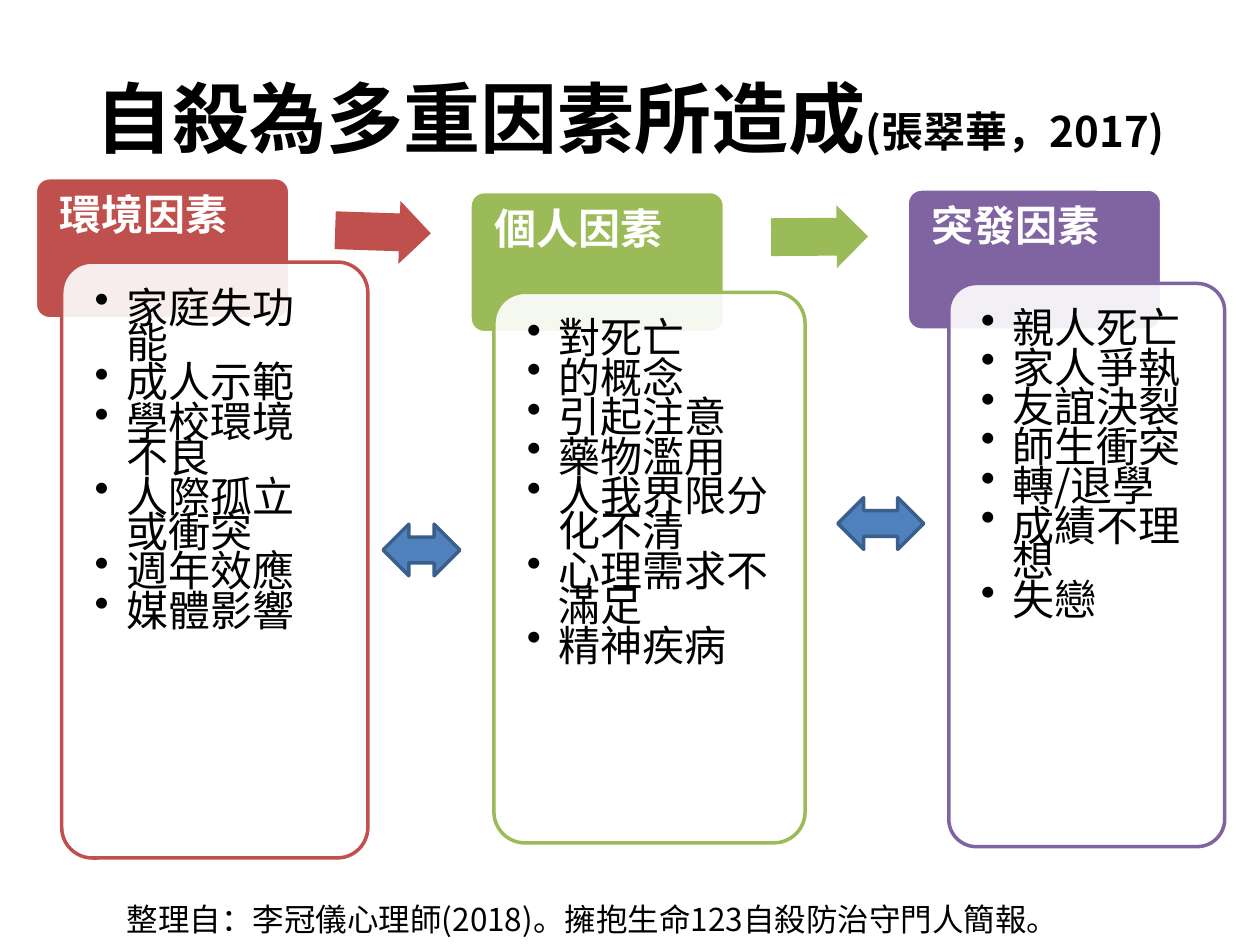
from lxml import etree
from pptx import Presentation
from pptx.dml.color import RGBColor
from pptx.enum.shapes import MSO_SHAPE
from pptx.enum.text import MSO_ANCHOR, PP_ALIGN
from pptx.oxml.ns import qn
from pptx.util import Inches, Pt

ROUNDED = MSO_SHAPE.ROUNDED_RECTANGLE
RIGHT_ARROW = MSO_SHAPE.RIGHT_ARROW
DOUBLE_ARROW = MSO_SHAPE.LEFT_RIGHT_ARROW
TOP, MIDDLE = MSO_ANCHOR.TOP, MSO_ANCHOR.MIDDLE
LEFT, CENTER = PP_ALIGN.LEFT, PP_ALIGN.CENTER

BLACK = RGBColor(0x00, 0x00, 0x00)
WHITE = RGBColor(0xFF, 0xFF, 0xFF)
RED = RGBColor(0xC0, 0x50, 0x4D)
GREEN = RGBColor(0x9B, 0xBB, 0x59)
PURPLE = RGBColor(0x80, 0x64, 0xA2)
BLUE = RGBColor(0x4F, 0x81, 0xBD)
DARK_BLUE = RGBColor(0x3A, 0x5F, 0x8C)

FONT = "Noto Sans CJK SC"
COLUMNS, ROWS = 100, 75  # the slide as a grid of square cells

# Heading, colour, heading place, panel place (column, row, width, height), items
FACTORS = [
    ("環境因素", RED, (2.8, 14.1, 20.2, 11.2), (4.9, 20.8, 24.3, 47.3),
     ["家庭失功能", "成人示範", "學校環境不良", "人際孤立或衝突",
      "週年效應", "媒體影響"]),
    ("個人因素", GREEN, (37.3, 15.2, 20.2, 11.2), (39.2, 23.2, 24.7, 43.7),
     ["對死亡", "的概念", "引起注意", "藥物濫用", "人我界限分化不清",
      "心理需求不滿足", "精神疾病"]),
    ("突發因素", PURPLE, (72, 15, 20.2, 11.2), (75.3, 22.5, 21.9, 44.7),
     ["親人死亡", "家人爭執", "友誼決裂", "師生衝突", "轉/退學",
      "成績不理想", "失戀"]),
]


def add_span(para, text, size=24, color=BLACK, bold=False):
    span = para.add_run()
    span.text = text
    font = span.font
    font.size, font.bold, font.name = Pt(size), bold, FONT
    font.color.rgb = color
    east_asian = etree.SubElement(font._element, qn("a:ea"))
    east_asian.set("typeface", FONT)


def add_bullet(para):
    properties = para._p.get_or_add_pPr()
    properties.set("marL", str(Inches(0.25)))
    properties.set("indent", str(Inches(-0.25)))
    etree.SubElement(properties, qn("a:buChar")).set("char", "•")


class Page:
    def __init__(self, deck):
        self.slide = deck.slides.add_slide(deck.slide_layouts[6])
        self.cell_width = deck.slide_width / COLUMNS
        self.cell_height = deck.slide_height / ROWS

    def place(self, column, row, width, height):
        return (round(column * self.cell_width), round(row * self.cell_height),
                round(width * self.cell_width), round(height * self.cell_height))

    def frame(self, box, inset, anchor, wrap=True):
        frame = box.text_frame
        frame.word_wrap, frame.vertical_anchor = wrap, anchor
        frame.margin_left = frame.margin_right = Inches(inset)
        frame.margin_top = frame.margin_bottom = Inches(inset)
        return frame

    def text(self, area, spans, align=LEFT, anchor=TOP, inset=0.05, wrap=True):
        box = self.slide.shapes.add_textbox(*self.place(*area))
        para = self.frame(box, inset, anchor, wrap).paragraphs[0]
        para.alignment = align
        for text, style in spans:
            add_span(para, text, **style)

    def shape(self, kind, area, fill, line=None, adjust=(), turn=0):
        shape = self.slide.shapes.add_shape(kind, *self.place(*area))
        shape.shadow.inherit = False
        shape.rotation = turn
        for index, value in enumerate(adjust):
            shape.adjustments[index] = value
        shape.fill.solid()
        shape.fill.fore_color.rgb = fill
        if line is None:
            shape.line.fill.background()
        else:
            shape.line.color.rgb = line
            shape.line.width = Pt(2)
        return shape

    def heading(self, area, text, color):
        box = self.shape(ROUNDED, area, color, WHITE, [0.1])
        para = self.frame(box, 0.16, TOP).paragraphs[0]
        para.alignment, para.line_spacing = LEFT, 0.7
        add_span(para, text, color=WHITE, bold=True)

    def panel(self, area, items, color):
        box = self.shape(ROUNDED, area, WHITE, color, [0.1])
        solid = box.fill._xPr.find(qn("a:solidFill"))
        etree.SubElement(solid[0], qn("a:alpha")).set("val", "90000")
        frame = self.frame(box, 0.19, TOP)
        for index, item in enumerate(items):
            para = frame.add_paragraph() if index else frame.paragraphs[0]
            add_bullet(para)
            para.alignment, para.line_spacing = LEFT, 0.7
            para.space_after = Pt(2.4)
            add_span(para, item)

    def flow_arrow(self, area, color, turn):
        self.shape(RIGHT_ARROW, area, color, adjust=[0.6, 0.5], turn=turn)

    def exchange_arrow(self, area):
        self.shape(DOUBLE_ARROW, area, BLUE, DARK_BLUE)


def main():
    deck = Presentation()
    deck.slide_width, deck.slide_height = Inches(10), Inches(7.5)
    page = Page(deck)

    # Title
    page.text((5, 3, 90, 12.5),
              [("自殺為多重因素所造成", {"size": 44, "bold": True}),
               ("(張翠華，2017)", {"bold": True})],
              align=CENTER, anchor=MIDDLE)

    # Three factors, each a heading with a panel of items over it
    for heading, color, heading_area, panel_area, items in FACTORS:
        page.heading(heading_area, heading, color)
        page.panel(panel_area, items, color)

    # Arrows between the factors
    page.flow_arrow((26.6, 15.9, 7.6, 5), RED, 1.9)
    page.flow_arrow((61.2, 16.3, 7.7, 5), GREEN, -0.4)
    page.exchange_arrow((30.4, 41.6, 6.1, 4.1))
    page.exchange_arrow((66.5, 39.5, 6.8, 4.1))

    # Credit
    page.text((9.1, 70.4, 78.6, 4),
              [("整理自：李冠儀心理師(2018)。擁抱生命123自殺防治守門人簡報。",
                {"size": 18})], inset=0.1, wrap=False)

    deck.save("out.pptx")


if __name__ == "__main__":
    main()
